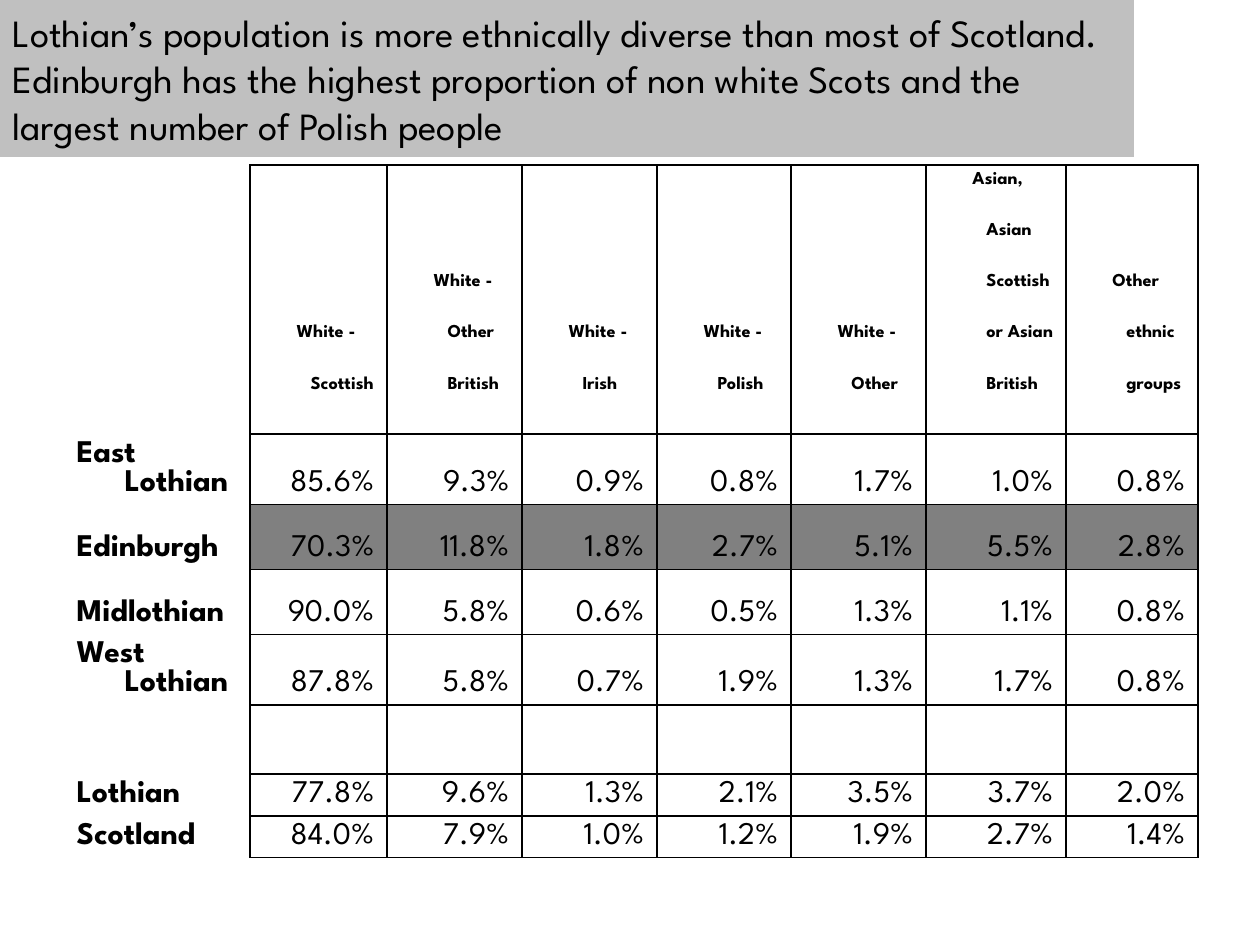
"""Build the slide on ethnic diversity in Lothian, with a title band and a table."""
from dataclasses import dataclass

from lxml import etree
from pptx import Presentation
from pptx.dml.color import RGBColor
from pptx.enum.text import MSO_ANCHOR, MSO_AUTO_SIZE, PP_ALIGN
from pptx.oxml.ns import qn
from pptx.util import Emu, Pt

LEFT, RIGHT = PP_ALIGN.LEFT, PP_ALIGN.RIGHT
MIDDLE, BOTTOM = MSO_ANCHOR.MIDDLE, MSO_ANCHOR.BOTTOM
NO_AUTOFIT = MSO_AUTO_SIZE.NONE
PLAIN_TABLE = "{2D5ABB26-0587-4C30-8999-92F81FD0307C}"
TITLE_ONLY = 5


@dataclass(frozen=True)
class Theme:
    font: str = "League Spartan"
    ink: str = "000000"
    band: str = "C0C0C0"
    highlight: str = "808080"
    title_size: int = 22
    table_size: int = 18
    border: int = 1


theme = Theme()


def px(length):
    return Emu(round(length * 914400 / 126))


def write(frame, text, size=theme.table_size, bold=False, align=LEFT,
          margin=0, indent=0, raised=False):
    paragraph = frame.paragraphs[0]
    paragraph.alignment = align
    properties = paragraph._p.get_or_add_pPr()
    properties.set("marL", str(px(margin)))
    properties.set("indent", str(px(indent)))
    run = paragraph.add_run()
    run.text = text
    run.font.name = theme.font
    run.font.size = Pt(size)
    run.font.bold = bold
    run.font.color.rgb = RGBColor.from_string(theme.ink)
    if raised:
        run.font._element.set("baseline", "100000")


groups = ["White - Scottish", "White - Other British", "White - Irish",
          "White - Polish", "White - Other",
          "Asian, Asian Scottish or Asian British", "Other ethnic groups"]
areas = [
    ("East Lothian", "85.6% 9.3% 0.9% 0.8% 1.7% 1.0% 0.8%"),
    ("Edinburgh", "70.3% 11.8% 1.8% 2.7% 5.1% 5.5% 2.8%"),
    ("Midlothian", "90.0% 5.8% 0.6% 0.5% 1.3% 1.1% 0.8%"),
    ("West Lothian", "87.8% 5.8% 0.7% 1.9% 1.3% 1.7% 0.8%"),
    ("", ""),
    ("Lothian", "77.8% 9.6% 1.3% 2.1% 3.5% 3.7% 2.0%"),
    ("Scotland", "84.0% 7.9% 1.0% 1.2% 1.9% 2.7% 1.4%"),
]
column_widths = [186, 137, 135, 135, 134, 135, 140, 132]
row_heights = [218, 65, 65, 65, 65, 69, 39, 39]

deck = Presentation()
deck.slide_width, deck.slide_height = px(1260), px(945)
slide = deck.slides.add_slide(deck.slide_layouts[TITLE_ONLY])

headline = slide.shapes.title
headline.left, headline.top = px(0), px(0)
headline.width, headline.height = px(1134), px(157)
headline.fill.solid()
headline.fill.fore_color.rgb = RGBColor.from_string(theme.band)
headline.text_frame.auto_size = NO_AUTOFIT
headline.text_frame.word_wrap = True
headline.text_frame.vertical_anchor = MIDDLE
write(headline.text_frame,
      "Lothian’s population is more ethnically diverse than most of Scotland. "
      "Edinburgh has the highest proportion of non white Scots and the "
      "largest number of Polish people",
      size=theme.title_size)

ethnicity = slide.shapes.add_table(
    len(row_heights), len(column_widths),
    px(64), px(165), px(sum(column_widths)), px(693)).table
ethnicity.first_row = ethnicity.horz_banding = False
ethnicity._tbl.tblPr.find(qn("a:tableStyleId")).text = PLAIN_TABLE
for column, width in zip(ethnicity.columns, column_widths):
    column.width = px(width)
for row, height in zip(ethnicity.rows, row_heights):
    row.height = px(height)

contents = [["", *groups]]
contents += [[area, *(shares.split() or [""] * len(groups))] for area, shares in areas]
for row, texts in enumerate(contents):
    for column, text in enumerate(texts):
        cell = ethnicity.cell(row, column)
        cell.vertical_anchor = BOTTOM
        edges = ("lnL", "lnR", "lnT", "lnB") if column else ("lnR",)
        for edge in edges:
            line = etree.SubElement(cell._tc.get_or_add_tcPr(), qn(f"a:{edge}"),
                                    w=str(Pt(theme.border)))
            ink = etree.SubElement(line, qn("a:solidFill"))
            etree.SubElement(ink, qn("a:srgbClr"), val=theme.ink)
        if column and texts[0] == "Edinburgh":
            cell.fill.solid()
            cell.fill.fore_color.rgb = RGBColor.from_string(theme.highlight)
        else:
            cell.fill.background()
        if not text:
            continue
        if row == 0:
            write(cell.text_frame, text, bold=True, margin=48, indent=-14, raised=True)
        else:
            write(cell.text_frame, text, bold=column == 0,
                  align=RIGHT if column else LEFT, margin=48, indent=-48)

deck.save("out.pptx")
